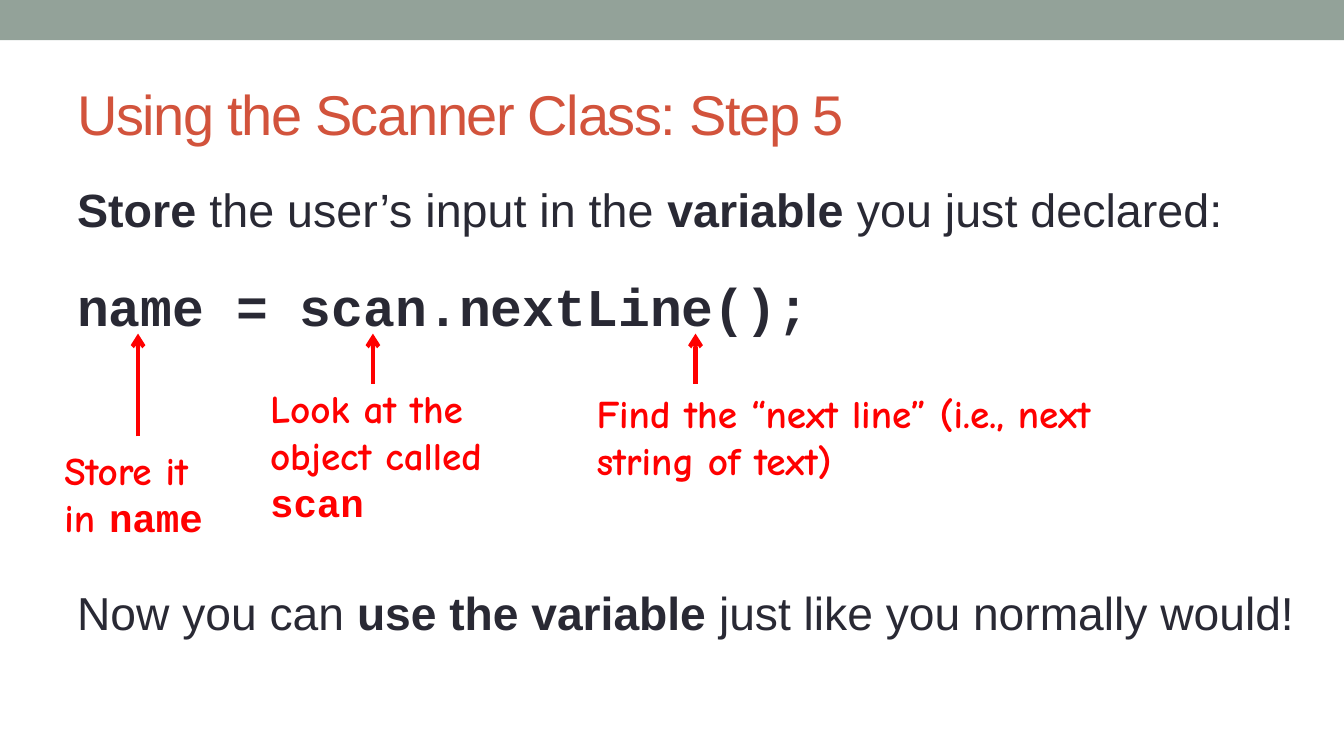
import pptx
import pptx.util
import pptx.dml.color
import pptx.enum.shapes
import pptx.enum.text
import pptx.oxml.ns
import lxml.etree

Pt = pptx.util.Pt

THEME = {
    "band": "93A299", "title": "D2533C", "body": "292934", "note": "FF0000",
    "sans": "Arial", "hand": "Comic Neue", "mono": "Courier New",
    "title_size": 40, "body_size": 33.3, "code_size": 37.9, "note_size": 28, "closing_size": 33,
}
SLIDE_SIZE = (960, 540)
BAND_HEIGHT = 28.8
ARROW_TIP = 238.3
ARROW_WIDTH = 3

TITLE = "Using the Scanner Class: Step 5"
INSTRUCTION = [("Store ", True), ("the user’s input in the ", False),
               ("variable ", True), ("you just declared:", False)]
CODE = "name = scan.nextLine();"
CLOSING = [("Now you can ", False), ("use the variable ", True),
           ("just like you normally would!", False)]
CALLOUTS = [
    {"words": "Look at the object called ", "code": "scan",
     "box": (185.8, 270.7, 202.3, 108.7), "arrow": (266.4, 274.3)},
    {"words": "Find the “next line” (i.e., next string of text)", "code": "",
     "box": (419, 274.3, 382.3, 74.9), "arrow": (496.8, 274.3)},
    {"words": "Store it in ", "code": "name",
     "box": (38.9, 315.4, 131.8, 74.9), "arrow": (98.6, 311.8)},
]


def color(name):
    return pptx.dml.color.RGBColor.from_string(THEME[name])


def add_text(paragraph, text, *, size, ink, font="sans", bold=False, spacing=None):
    run = paragraph.add_run()
    run.text = text
    run.font.name = THEME[font]
    run.font.size = Pt(THEME[size])
    run.font.bold = bold
    run.font.color.rgb = color(ink)
    if spacing is not None:
        run.font._element.set("spc", str(spacing))


def add_box(shapes, box, anchor=pptx.enum.text.MSO_ANCHOR.TOP):
    frame = shapes.add_textbox(*map(Pt, box)).text_frame
    frame.word_wrap = True
    frame.vertical_anchor = anchor
    return frame


def add_arrow(shapes, x, start):
    arrow = shapes.add_connector(pptx.enum.shapes.MSO_CONNECTOR.STRAIGHT,
                                 Pt(x), Pt(start), Pt(x), Pt(ARROW_TIP))
    arrow.line.color.rgb = color("note")
    arrow.line.width = Pt(ARROW_WIDTH)
    qn = pptx.oxml.ns.qn
    lxml.etree.SubElement(arrow.line._get_or_add_ln(), qn("a:tailEnd"), type="arrow")
    lxml.etree.SubElement(arrow._element.spPr, qn("a:effectLst"))


def add_callout(slide, callout):
    shapes = slide.shapes.add_group_shape().shapes
    paragraph = add_box(shapes, callout["box"]).paragraphs[0]
    for text, font in ((callout["words"], "hand"), (callout["code"], "mono")):
        if text:
            add_text(paragraph, text, size="note_size", ink="note", font=font, bold=True)
    add_arrow(shapes, *callout["arrow"])


def main():
    presentation = pptx.Presentation()
    presentation.slide_width, presentation.slide_height = map(Pt, SLIDE_SIZE)
    slide = presentation.slides.add_slide(presentation.slide_layouts[6])

    band = slide.shapes.add_shape(pptx.enum.shapes.MSO_SHAPE.RECTANGLE,
                                  0, 0, Pt(SLIDE_SIZE[0]), Pt(BAND_HEIGHT))
    band.shadow.inherit = False
    band.fill.solid()
    band.fill.fore_color.rgb = color("band")
    band.line.fill.background()

    title = add_box(slide.shapes, (48, 42, 864, 78), pptx.enum.text.MSO_ANCHOR.MIDDLE)
    add_text(title.paragraphs[0], TITLE, size="title_size", ink="title", spacing=-100)

    body = add_box(slide.shapes, (48, 126, 889, 144))
    for text, bold in INSTRUCTION:
        add_text(body.paragraphs[0], text, size="body_size", ink="body", bold=bold)
    code = body.add_paragraph()
    code.space_before = Pt(26)
    add_text(code, CODE, size="code_size", ink="body", font="mono", bold=True)

    for callout in CALLOUTS:
        add_callout(slide, callout)

    closing = add_box(slide.shapes, (48, 414, 901.5, 87))
    for text, bold in CLOSING:
        add_text(closing.paragraphs[0], text, size="closing_size", ink="body", bold=bold)

    presentation.save("out.pptx")


if __name__ == "__main__":
    main()
